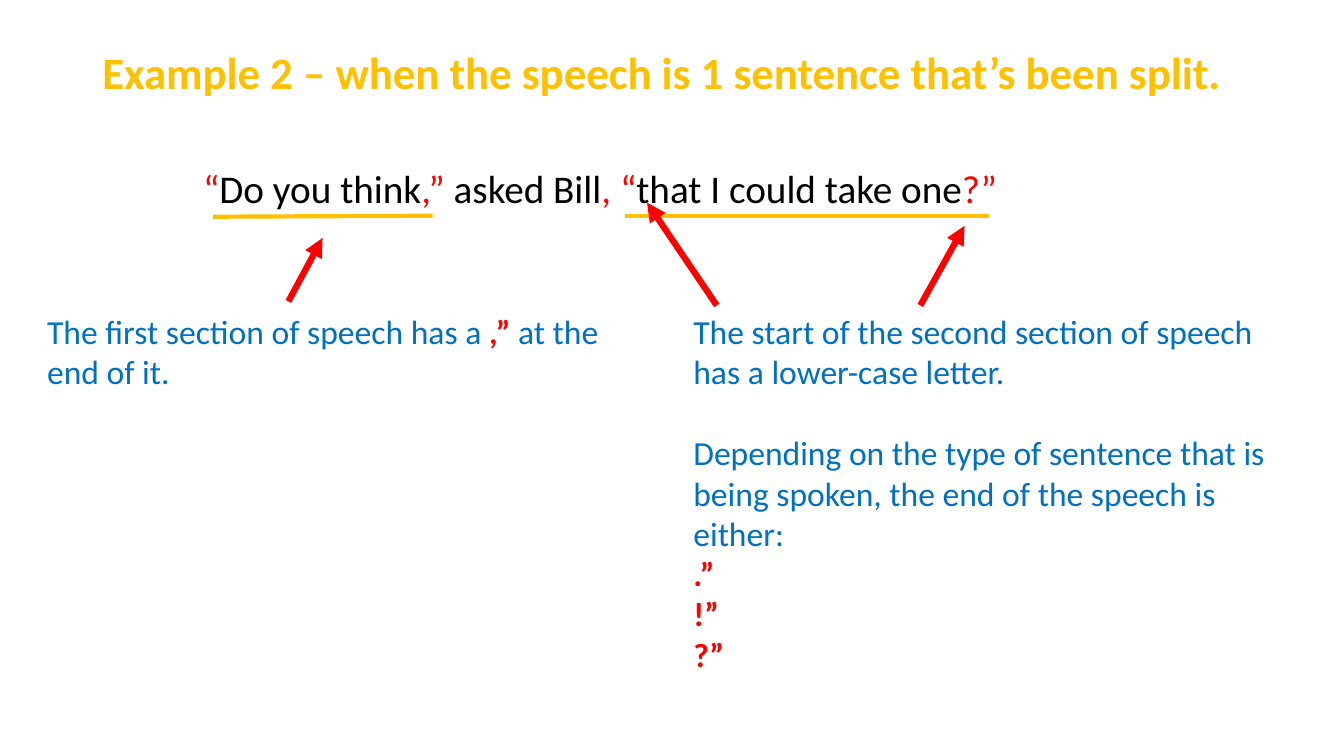
from lxml.etree import SubElement
from pptx import Presentation
from pptx.dml.color import RGBColor
from pptx.enum.shapes import MSO_CONNECTOR as CONN
from pptx.oxml.ns import qn
from pptx.util import Pt

GOLD, RED, BLUE, BLACK = "FFC000", "FF0000", "0070C0", "000000"


def rgb(hex_code):
    return RGBColor.from_string(hex_code)


def set_all(obj, values):
    for name, value in values.items():
        setattr(obj, name, value)


def add_para(tf, runs, size, indent=0, **fmt):
    """Fill the empty first paragraph, or append one; runs are (text, colour, bold)."""
    p = tf.paragraphs[0]
    if p.runs:
        p = tf.add_paragraph()
    set_all(p, fmt)
    if indent:
        p._p.get_or_add_pPr().set("marL", str(Pt(indent)))
    for text, colour, bold in runs:
        r = p.add_run()
        r.text = text
        set_all(r.font, {"name": "Calibri", "size": Pt(size), "bold": bold})
        r.font.color.rgb = rgb(colour)


def add_text(s, x, y, w, h):
    tf = s.shapes.add_textbox(Pt(x), Pt(y), Pt(w), Pt(h)).text_frame
    tf.word_wrap = True
    return tf


def add_line(s, start, end, colour, width, arrow=False):
    sp = s.shapes.add_connector(CONN.STRAIGHT, *map(Pt, start + end))
    sp.line.width = Pt(width)
    sp.line.color.rgb = rgb(colour)
    if arrow:
        SubElement(sp.line._get_or_add_ln(), qn("a:tailEnd"), type="triangle")
    SubElement(sp._element.spPr, qn("a:effectLst"))


def main():
    prs = Presentation()
    set_all(prs, {"slide_width": Pt(960), "slide_height": Pt(540)})
    s = prs.slides.add_slide(prs.slide_layouts[6])

    # Title and example sentence
    tf = add_text(s, 66, 32.4, 828, 129)
    add_para(tf, [("Example 2 – when the speech is 1 sentence that’s been split.",
                   GOLD, True)], 32, line_spacing=0.9)
    sentence = [("“", RED), ("Do you think", BLACK), (",”", RED),
                (" asked Bill", BLACK), (", “", RED),
                ("that I could take one", BLACK), ("?”", RED)]
    add_para(tf, [(text, colour, False) for text, colour in sentence], 28,
             indent=72, line_spacing=0.9, space_before=Pt(50.8))

    # Note on the first section of speech
    tf = add_text(s, 26.6, 218.2, 436.3, 65.5)
    add_para(tf, [("The first section of speech has a ", BLUE, False),
                  (",” ", RED, True), ("at the end of it.", BLUE, False)], 24)

    # Notes on the second section of speech
    tf = add_text(s, 488.2, 218.2, 436.3, 269.3)
    add_para(tf, [("The start of the second section of speech has a "
                   "lower-case letter.", BLUE, False)], 24)
    add_para(tf, [("Depending on the type of sentence that is being spoken, "
                   "the end of the speech is either:", BLUE, False)], 24,
             space_before=Pt(29.3))
    for ending in (".”", "!”", "?”"):
        add_para(tf, [(ending, RED, True)], 24)

    # Underlines beneath the spoken words
    for start, end in (((152, 154.8), (309, 154.1)),
                       ((446.4, 154.1), (706.3, 154.1))):
        add_line(s, start, end, GOLD, 3)

    # Arrows from the notes to the sentence
    for start, end in (((206, 215.3), (230.4, 170)),
                       ((512, 218.2), (462.2, 144.7)),
                       ((657.4, 218.2), (689, 161.3))):
        add_line(s, start, end, RED, 4.5, arrow=True)

    prs.save("out.pptx")


if __name__ == "__main__":
    main()
